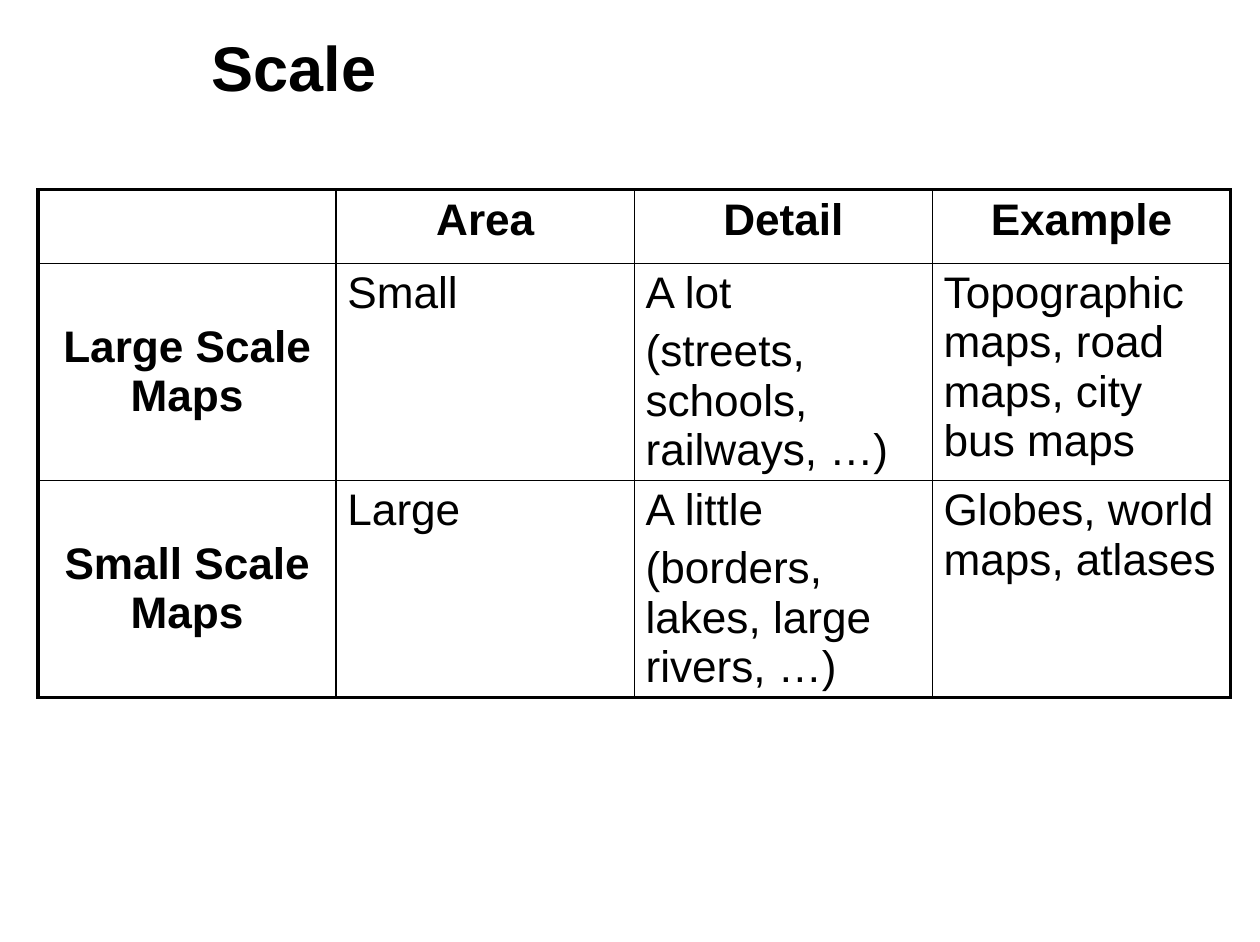
"""Build the slide comparing large scale and small scale maps."""
from lxml.etree import SubElement
from pptx import Presentation
from pptx.dml.color import RGBColor
from pptx.enum.text import MSO_ANCHOR, MSO_AUTO_SIZE, PP_ALIGN
from pptx.oxml.ns import qn
from pptx.util import Cm, Pt

COLORS = {"text": "000000", "border": "000000"}
FONT = "Arial"
THIN, THICK = Pt(1), Pt(2.25)
COL_WIDTH = Cm(6.67)
ROW_HEIGHTS = [Cm(1.64), Cm(4.85), Cm(4.85)]
ROWS = [
    ["", "Area", "Detail", "Example"],
    ["Large Scale Maps", "Small", "A lot\n(streets, schools, railways, …)",
     "Topographic maps, road maps, city bus maps"],
    ["Small Scale Maps", "Large", "A little\n(borders, lakes, large rivers, …)",
     "Globes, world maps, atlases"],
]


def format_paragraph(p, size, bold, align):
    p.alignment = align
    p.font.name = FONT
    p.font.size = Pt(size)
    p.font.bold = bold
    p.font.color.rgb = RGBColor.from_string(COLORS["text"])


def add_title(s, text):
    title = s.shapes.title
    title.left, title.top, title.width, title.height = Cm(4.45), Cm(0.22), Cm(23.29), Cm(2.54)
    tf = title.text_frame
    tf.text = text
    tf.auto_size = MSO_AUTO_SIZE.NONE
    tf.vertical_anchor = MSO_ANCHOR.MIDDLE
    tf.margin_left = tf.margin_right = Cm(0.28)
    tf.margin_top = tf.margin_bottom = Cm(0.14)
    format_paragraph(tf.paragraphs[0], 40, True, PP_ALIGN.LEFT)


def set_borders(cell, outer_edges):
    """Draw thick lines on the table's outer edges and thin ones elsewhere."""
    tc_pr = cell._tc.get_or_add_tcPr()
    for side, outer in outer_edges.items():
        ln = SubElement(tc_pr, qn(f"a:ln{side}"), w=str(THICK if outer else THIN))
        fill = SubElement(ln, qn("a:solidFill"))
        SubElement(fill, qn("a:srgbClr"), val=COLORS["border"])


def fill_cell(cell, text, is_header, is_label):
    cell.fill.background()
    cell.vertical_anchor = MSO_ANCHOR.MIDDLE if is_label else MSO_ANCHOR.TOP
    cell.text = text
    bold = is_header or is_label
    for i, p in enumerate(cell.text_frame.paragraphs):
        if i:
            p.space_before = Pt(5.6)
        format_paragraph(p, 28, bold, PP_ALIGN.CENTER if bold else PP_ALIGN.LEFT)


def add_scale_table(s):
    n_rows, n_cols = len(ROWS), len(ROWS[0])
    table = s.shapes.add_table(n_rows, n_cols, Cm(0.85), Cm(4.25),
                               COL_WIDTH * n_cols, sum(ROW_HEIGHTS)).table
    table.first_row = table.horz_banding = False
    for column in table.columns:
        column.width = COL_WIDTH
    for r, row in enumerate(ROWS):
        table.rows[r].height = ROW_HEIGHTS[r]
        for c, text in enumerate(row):
            cell = table.cell(r, c)
            set_borders(cell, {"L": c == 0, "R": c == n_cols - 1,
                               "T": r == 0, "B": r == n_rows - 1})
            fill_cell(cell, text, r == 0, r > 0 and c == 0)


def main():
    prs = Presentation()
    prs.slide_width, prs.slide_height = Cm(28.19), Cm(21.08)
    s = prs.slides.add_slide(prs.slide_layouts[5])
    add_title(s, "Scale")
    add_scale_table(s)
    prs.save("out.pptx")


if __name__ == "__main__":
    main()
